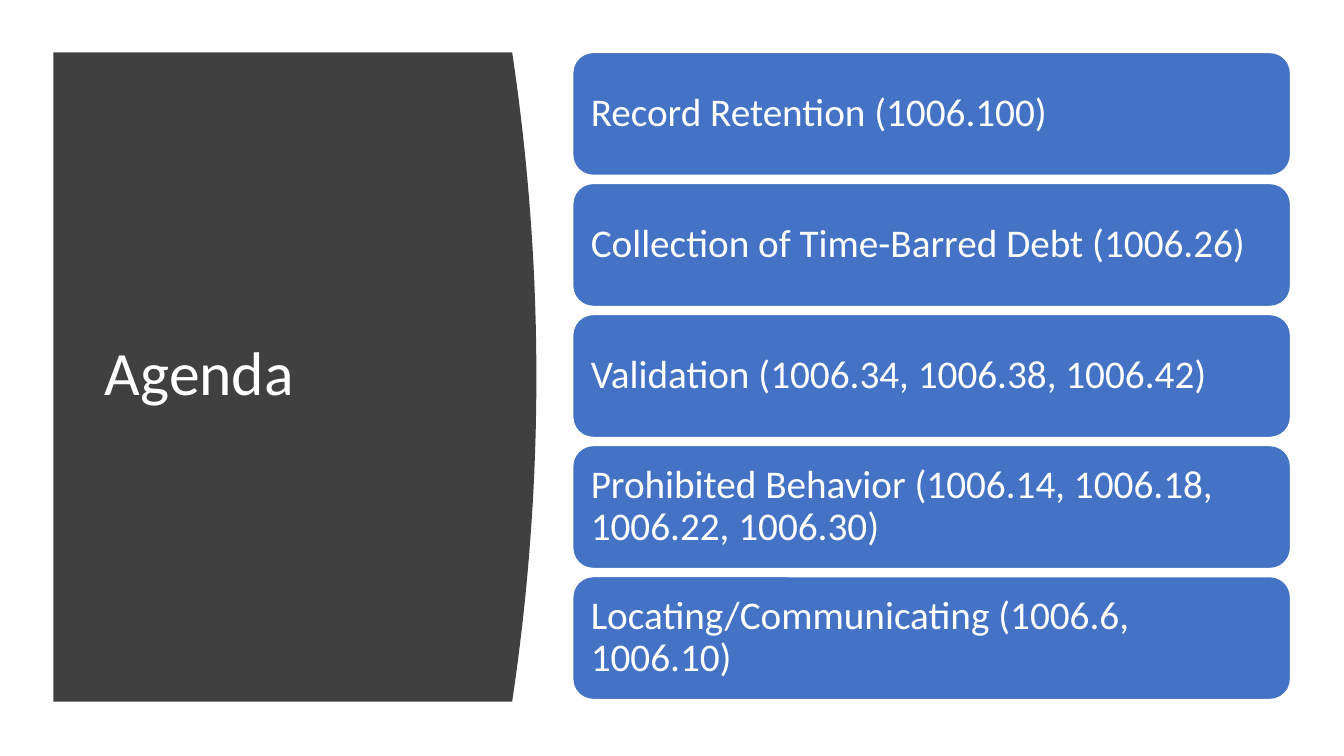
from pptx import Presentation
from pptx.dml.color import RGBColor
from pptx.enum.shapes import MSO_SHAPE
from pptx.enum.text import MSO_ANCHOR, MSO_AUTO_SIZE, PP_ALIGN
from pptx.util import Inches, Pt

ROUNDED = MSO_SHAPE.ROUNDED_RECTANGLE
MIDDLE = MSO_ANCHOR.MIDDLE
LEFT = PP_ALIGN.LEFT
NO_AUTOFIT = MSO_AUTO_SIZE.NONE

TOPICS = [
    "Record Retention (1006.100)",
    "Collection of Time-Barred Debt (1006.26)",
    "Validation (1006.34, 1006.38, 1006.42)",
    "Prohibited Behavior (1006.14, 1006.18, 1006.22, 1006.30)",
    "Locating/Communicating (1006.6, 1006.10)",
]


def color(hex_code):
    return RGBColor.from_string(hex_code)


class AgendaSlide:
    font = "Calibri"
    white = "FFFFFF"
    panel_fill = "404040"
    topic_fill = "4472C4"

    def __init__(self, presentation):
        self.slide = presentation.slides.add_slide(presentation.slide_layouts[5])
        self.shapes = self.slide.shapes

    def set_text(self, shape, text, size):
        frame = shape.text_frame
        frame.text = text
        frame.word_wrap = True
        frame.auto_size = NO_AUTOFIT
        frame.vertical_anchor = MIDDLE
        paragraph = frame.paragraphs[0]
        paragraph.alignment = LEFT
        paragraph.line_spacing = 0.9
        font = paragraph.runs[0].font
        font.name = self.font
        font.size = Pt(size)
        font.color.rgb = color(self.white)
        return frame

    def panel(self, left, top, edge, bulge, height, steps=40):
        def curve_point(step):
            offset = 2 * step / steps - 1
            x = edge + bulge * (1 - offset ** 2)
            return Inches(x), Inches(top + height * step / steps)

        outline = self.shapes.build_freeform(Inches(left), Inches(top))
        curve = [curve_point(step) for step in range(steps + 1)]
        outline.add_line_segments(curve + [(Inches(left), Inches(top + height))])
        panel = outline.convert_to_shape()
        panel.shadow.inherit = False
        panel.fill.solid()
        panel.fill.fore_color.rgb = color(self.panel_fill)
        panel.line.fill.background()

    def title(self, text, left, top, width, height):
        title = self.shapes.title
        title.left, title.top = Inches(left), Inches(top)
        title.width, title.height = Inches(width), Inches(height)
        self.set_text(title, text, 44)
        title.element.getparent().append(title.element)

    def topic(self, text, left, top, width, height):
        topic = self.shapes.add_shape(
            ROUNDED, Inches(left), Inches(top), Inches(width), Inches(height))
        topic.shadow.inherit = False
        topic.fill.solid()
        topic.fill.fore_color.rgb = color(self.topic_fill)
        topic.line.color.rgb = color(self.white)
        topic.line.width = Pt(1)
        frame = self.set_text(topic, text, 28)
        frame.margin_left = frame.margin_right = Inches(0.12)
        frame.margin_top = frame.margin_bottom = Inches(0.12)


def main():
    presentation = Presentation()
    presentation.slide_width = Inches(13.33)
    presentation.slide_height = Inches(7.5)

    agenda = AgendaSlide(presentation)
    agenda.panel(left=0.53, top=0.52, edge=5.08, bulge=0.24, height=6.44)
    agenda.title("Agenda", 0.94, 1.11, 3.74, 5.24)
    for index, topic in enumerate(TOPICS):
        agenda.topic(topic, 5.68, 0.52 + 1.3 * index, 7.12, 1.22)

    presentation.save("out.pptx")


if __name__ == "__main__":
    main()
